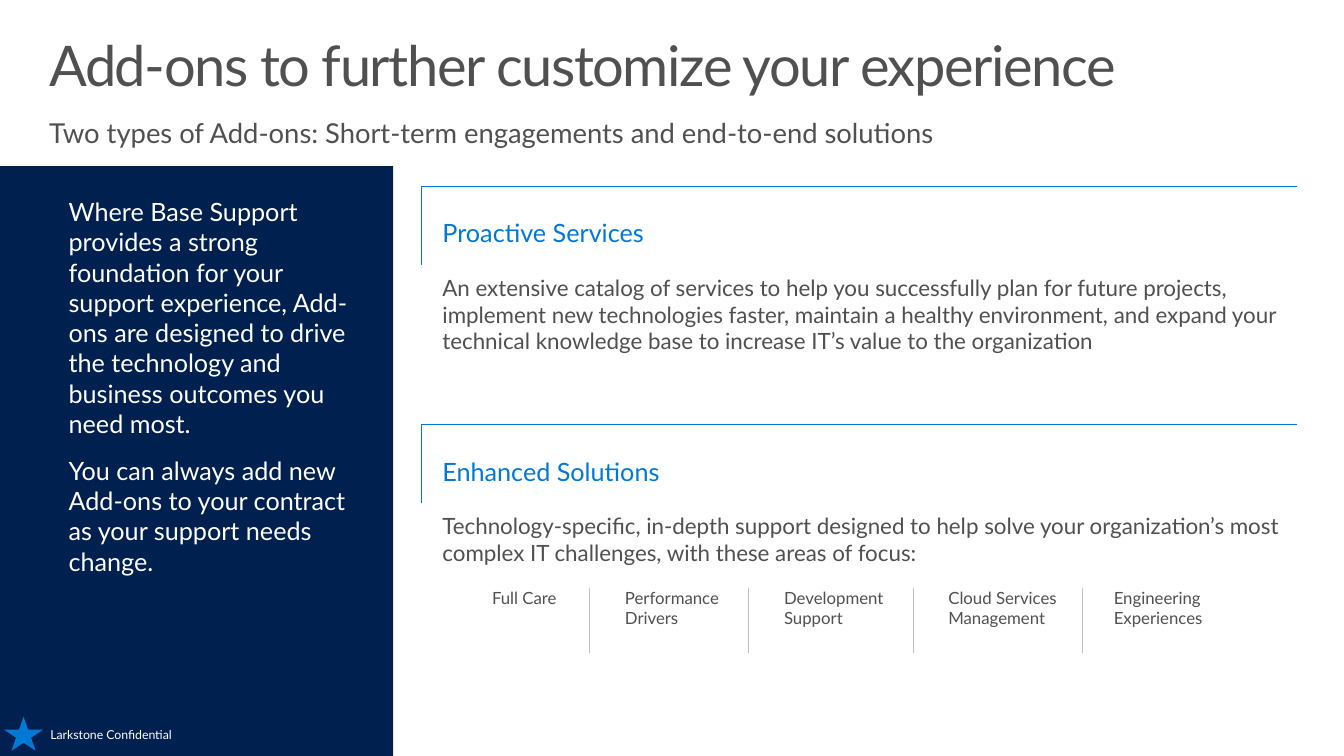
import pptx
import pptx.util
import pptx.dml.color
import pptx.enum.shapes
import pptx.enum.text
import pptx.oxml
from pptx.util import Cm

COLORS = {"navy": "002050", "gray": "505050", "white": "FFFFFF", "heading": "0078D7",
          "accent": "0078D4", "divider": "BFBFBF"}
FONT = "Lato"

TITLE = "Add-ons to further customize your experience"
SUBTITLE = "Two types of Add-ons: Short-term engagements and end-to-end solutions"
INTRO = [
    "Where Base Support provides a strong foundation for your support experience, "
    "Add-ons are designed to drive the technology and business outcomes you need most.",
    "You can always add new Add-ons to your contract as your support needs change.",
]
SECTIONS = [
    ("Proactive Services",
     "An extensive catalog of services to help you successfully plan for future projects, "
     "implement new technologies faster, maintain a healthy environment, and expand your "
     "technical knowledge base to increase IT’s value to the organization"),
    ("Enhanced Solutions",
     "Technology-specific, in-depth support designed to help solve your organization’s most "
     "complex IT challenges, with these areas of focus:"),
]
# Focus area, left edge and width in cm
FOCUS_AREAS = [
    ("Full Care", 12.4, 3.3),
    ("Performance Drivers", 15.75, 3.56),
    ("Development Support", 19.76, 2.82),
    ("Cloud Services Management", 23.9, 3.3),
    ("Engineering Experiences", 28.07, 3.05),
]
DIVIDERS = [14.86, 18.87, 23.01, 27.28]
FOOTER = "Larkstone Confidential"

SECTION_TOP, SECTION_PITCH = 4.7, 6
FOCUS_TOP, DIVIDER_HEIGHT = 14.81, 1.65


def rgb(name):
    return pptx.dml.color.RGBColor.from_string(COLORS[name])


def write(box, paragraphs, size, color="gray", insets=(0, 0), middle=False,
          gap=0, after=0, line_spacing=None, tracking=None):
    """Fill a box with formatted paragraphs; insets are horizontal, vertical in cm."""
    frame = box.text_frame
    frame.word_wrap = True
    frame.auto_size = pptx.enum.text.MSO_AUTO_SIZE.NONE
    anchors = pptx.enum.text.MSO_ANCHOR
    frame.vertical_anchor = anchors.MIDDLE if middle else anchors.TOP
    frame.margin_left = frame.margin_right = Cm(insets[0])
    frame.margin_top = frame.margin_bottom = Cm(insets[1])
    for index, text in enumerate(paragraphs):
        para = frame.add_paragraph() if index else frame.paragraphs[0]
        para.alignment = pptx.enum.text.PP_ALIGN.LEFT
        para.space_before = pptx.util.Pt(gap if index else 0)
        para.space_after = pptx.util.Pt(after)
        if line_spacing:
            para.line_spacing = line_spacing
        span = para.add_run()
        span.text = text
        span.font.name = FONT
        span.font.size = pptx.util.Pt(size)
        span.font.color.rgb = rgb(color)
        if tracking:
            span.font._element.set("spc", str(tracking))


def add_text(page, place, paragraphs, size, **style):
    box = page.shapes.add_textbox(*map(Cm, place))
    write(box, paragraphs, size, **style)


def add_filled(page, kind, place, color):
    shape = page.shapes.add_shape(kind, *map(Cm, place))
    shape.shadow.inherit = False
    shape.fill.solid()
    shape.fill.fore_color.rgb = rgb(color)
    shape.line.fill.background()
    return shape


def add_bracket(page, left, top, width, height):
    builder = page.shapes.build_freeform(Cm(left), Cm(top + height))
    builder.add_line_segments([(Cm(left), Cm(top)), (Cm(left + width), Cm(top))], close=False)
    bracket = builder.convert_to_shape()
    bracket.shadow.inherit = False
    bracket.fill.background()
    bracket.line.color.rgb = rgb("accent")
    bracket.line.width = pptx.util.Pt(0.25)


def add_divider(page, left):
    line = page.shapes.add_connector(pptx.enum.shapes.MSO_CONNECTOR.STRAIGHT, Cm(left),
                                     Cm(FOCUS_TOP), Cm(left), Cm(FOCUS_TOP + DIVIDER_HEIGHT))
    line.line.color.rgb = rgb("divider")
    line.line.width = pptx.util.Pt(0.5)
    line._element.spPr.append(pptx.oxml.parse_xml(
        '<a:effectLst xmlns:a="http://schemas.openxmlformats.org/drawingml/2006/main"/>'))


def main():
    deck = pptx.Presentation()
    deck.slide_width, deck.slide_height = Cm(33.87), Cm(19.05)
    page = deck.slides.add_slide(deck.slide_layouts[5])
    shapes = pptx.enum.shapes.MSO_SHAPE

    title = page.shapes.title
    title.left, title.top, title.width, title.height = map(Cm, (1.24, 0.71, 31.37, 2.59))
    write(title, [TITLE], 40, insets=(0, 0.25), line_spacing=0.9, tracking=-100)
    add_text(page, (1.24, 2.67, 31.37, 1.35), [SUBTITLE], 19.6, insets=(0, 0.25))

    add_filled(page, shapes.RECTANGLE, (0, 4.19, 9.91, 14.86), "navy")
    add_text(page, (1.35, 4.7, 8.13, 12.45), INTRO, 18, color="white",
             insets=(0.38, 0.25), gap=12)

    for index, (heading, description) in enumerate(SECTIONS):
        top = SECTION_TOP + index * SECTION_PITCH
        add_bracket(page, 10.62, top, 22.07, 1.98)
        add_text(page, (11.15, top + 0.41, 21.54, 1.52), [heading], 18,
                 color="heading", middle=True, after=2)
        add_text(page, (11.15, top + 2.2, 21.64, 2.34), [description], 16)

    for name, left, width in FOCUS_AREAS:
        add_text(page, (left, FOCUS_TOP, width, 1.78), [name], 12, after=2)
    for left in DIVIDERS:
        add_divider(page, left)

    add_text(page, (1.27, 18.31, 5.18, 0.38), [FOOTER], 8.8, color="white", middle=True)
    star = add_filled(page, shapes.STAR_5_POINT, (0.1, 18.06, 0.99, 0.86), "accent")
    for index, value in enumerate((0.191, 1.051, 1.106)):
        star.adjustments[index] = value

    deck.save("out.pptx")


if __name__ == "__main__":
    main()
